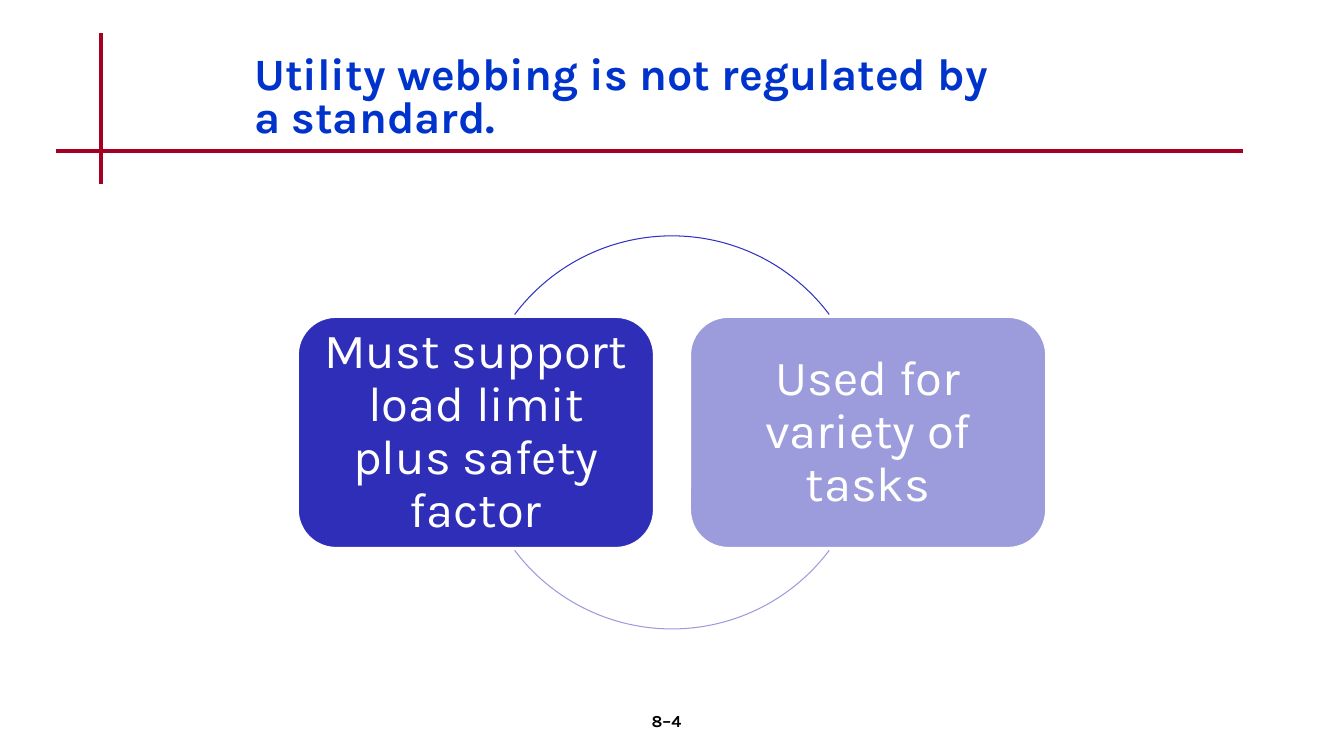
from lxml import etree
from pptx import Presentation
from pptx.dml.color import RGBColor
from pptx.enum.shapes import MSO_CONNECTOR, MSO_SHAPE
from pptx.enum.text import MSO_ANCHOR, PP_ALIGN
from pptx.oxml.ns import qn
from pptx.util import Inches, Pt

STRAIGHT = MSO_CONNECTOR.STRAIGHT
ARC, ROUNDED = MSO_SHAPE.ARC, MSO_SHAPE.ROUNDED_RECTANGLE
TOP, MIDDLE = MSO_ANCHOR.TOP, MSO_ANCHOR.MIDDLE
LEFT, CENTER = PP_ALIGN.LEFT, PP_ALIGN.CENTER

FONT = "Karla"
COLORS = {
    "rule": "A50021",
    "title": "0033CC",
    "number": "000000",
    "white": "FFFFFF",
    "limit": "2E2EB9",
    "tasks": "9C9CDD",
    "upper arc": "3131C3",
    "lower arc": "9B9BDD",
}
CARDS = [
    ("Must support load limit plus safety factor", "limit"),
    ("Used for variety of tasks", "tasks"),
]
# Colour, start and end in degrees clockwise from three o'clock
ARCS = [("upper arc", 216.87, 323.13), ("lower arc", 36.87, 143.13)]


def color(name):
    return RGBColor.from_string(COLORS[name])


def write(shape, text, size, color_name, align, anchor, bold=False, spacing=1.0):
    frame = shape.text_frame
    frame.word_wrap = True
    frame.vertical_anchor = anchor
    para = frame.paragraphs[0]
    para.alignment = align
    para.line_spacing = spacing
    para.space_before = Pt(0)
    span = para.add_run()
    span.text = text
    span.font.name = FONT
    span.font.size = Pt(size)
    span.font.bold = bold
    span.font.color.rgb = color(color_name)


def add_rule(page, x1, y1, x2, y2):
    rule = page.shapes.add_connector(
        STRAIGHT, Inches(x1), Inches(y1), Inches(x2), Inches(y2))
    rule.line.color.rgb = color("rule")
    rule.line.width = Pt(3)
    etree.SubElement(rule._element.spPr, qn("a:effectLst"))


def add_header(page, left, top, width, height):
    """Place the crossed rules and the title beside them."""
    add_rule(page, left + 0.44, top, left + 0.44, top + height)
    add_rule(page, left, top + 1.17, left + width, top + 1.17)
    title = page.shapes.title
    title.left, title.top = Inches(left + 1.86), Inches(top + 0.18)
    title.width, title.height = Inches(7.74), Inches(0.99)
    write(title, "Utility webbing is not regulated by a standard.",
          32, "title", LEFT, TOP, bold=True, spacing=0.8)


def add_card(page, left, top, width, height, text, fill):
    card = page.shapes.add_shape(
        ROUNDED, Inches(left), Inches(top), Inches(width), Inches(height))
    card.shadow.inherit = False
    card.fill.solid()
    card.fill.fore_color.rgb = color(fill)
    card.line.color.rgb = color("white")
    card.line.width = Pt(2)
    frame = card.text_frame
    frame.margin_left = frame.margin_right = Inches(0.14)
    frame.margin_top = frame.margin_bottom = Inches(0.14)
    write(card, text, 35, "white", CENTER, MIDDLE, spacing=0.9)


def add_cycle(page, left, top, width, height):
    """Place two cards side by side, linked by arcs of one circle."""
    card_width, card_height = 3.54, 2.3
    step = width - card_width
    card_top = top + (height - card_height) / 2
    for index, (text, fill) in enumerate(CARDS):
        add_card(page, left + index * step, card_top,
                 card_width, card_height, text, fill)
    for name, start, end in ARCS:
        arc = page.shapes.add_shape(
            ARC, Inches(left + (width - height) / 2), Inches(top),
            Inches(height), Inches(height))
        arc.shadow.inherit = False
        arc.fill.background()
        arc.line.color.rgb = color(name)
        arc.line.width = Pt(0.75)
        # One degree is 60000 units, and adjustments count in 100000s
        arc.adjustments[0] = start * 0.6
        arc.adjustments[1] = end * 0.6


def add_page_number(page, left, top, width, height):
    box = page.shapes.add_textbox(
        Inches(left), Inches(top), Inches(width), Inches(height))
    write(box, "8–4", 12, "number", CENTER, TOP, bold=True)


def main():
    deck = Presentation()
    deck.slide_width, deck.slide_height = Inches(13.33), Inches(7.5)
    page = deck.slides.add_slide(deck.slide_layouts[5])
    add_header(page, 0.56, 0.33, 11.77, 1.5)
    add_cycle(page, 2.95, 2.34, 7.43, 3.9)
    add_page_number(page, 5.22, 7, 2.78, 0.5)
    deck.save("out.pptx")


if __name__ == "__main__":
    main()
